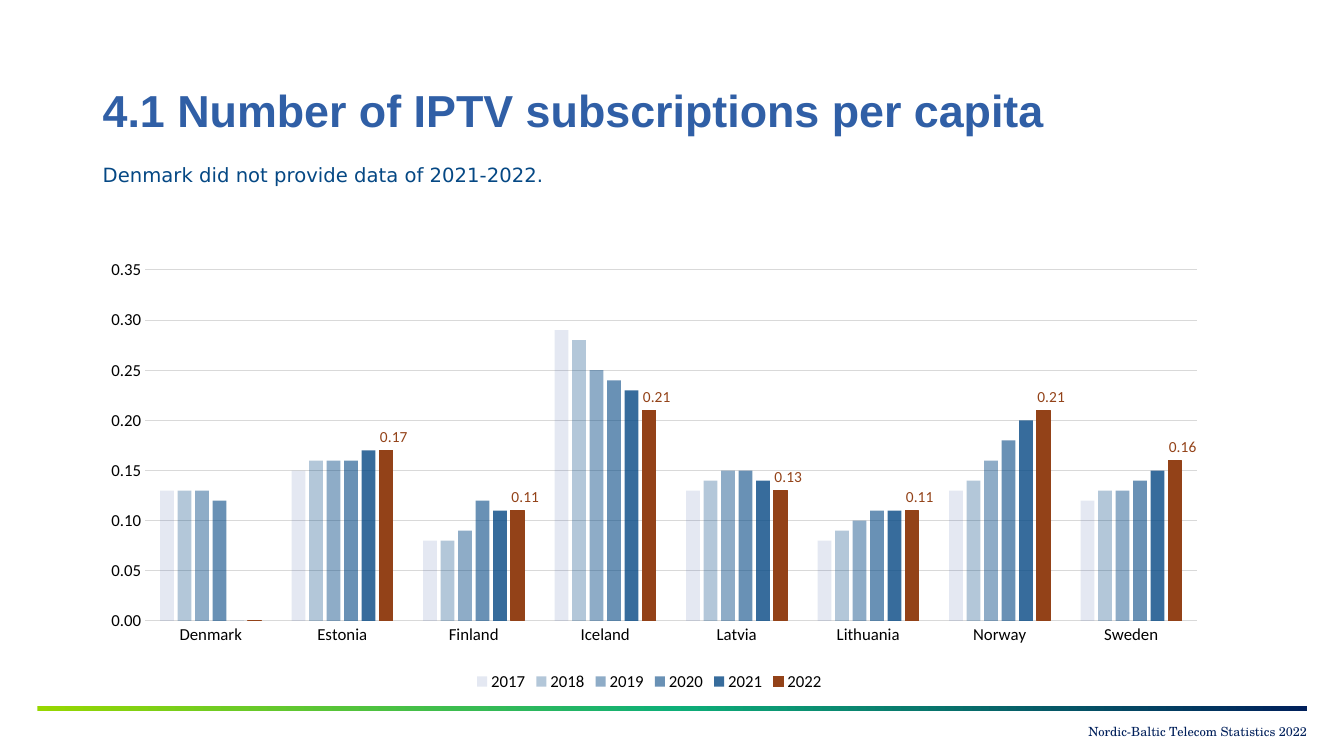
"""Build the slide on IPTV subscriptions per capita in the Nordic-Baltic countries."""
from copy import deepcopy
from dataclasses import dataclass

from pptx import Presentation
from pptx.chart.data import CategoryChartData
from pptx.dml.color import RGBColor
from pptx.enum.chart import XL_CHART_TYPE as ChartType, XL_LABEL_POSITION as LabelPosition
from pptx.enum.chart import XL_LEGEND_POSITION as LegendPosition, XL_TICK_MARK as TickMark
from pptx.enum.shapes import MSO_SHAPE as Preset
from pptx.enum.text import MSO_ANCHOR as Anchor, PP_ALIGN as Align
from pptx.oxml import parse_xml
from pptx.oxml.ns import nsdecls, qn
from pptx.util import Inches, Pt


@dataclass(frozen=True)
class Theme:
    title: str = "305FA6"
    blue: str = "054884"
    pale: str = "4A66AC"
    rust: str = "934218"
    navy: str = "00205B"
    lime: str = "97D700"
    green: str = "0EAF78"
    black: str = "000000"
    grid: str = "D9D9D9"
    title_size: int = 32
    note_size: int = 14
    axis_size: int = 12
    label_size: int = 11
    footer_size: int = 9


theme = Theme()


def style(font, name, size, color, bold=False):
    font.name, font.size, font.bold = name, Pt(size), bold
    font.color.rgb = RGBColor.from_string(color)


def add_text(box, text, name, size, color, bold=False):
    frame = slide.shapes.add_textbox(*map(Inches, box)).text_frame
    frame.word_wrap = True
    frame.text = text
    style(frame.paragraphs[0].runs[0].font, name, size, color, bold)
    return frame


deck = Presentation()
deck.slide_width, deck.slide_height = Inches(13.33), Inches(7.5)
slide = deck.slides.add_slide(deck.slide_layouts[6])

band = slide.shapes.add_shape(Preset.RECTANGLE, Inches(0.37), Inches(7), Inches(12.59), Inches(0.05))
band.shadow.inherit = False
band.line.fill.background()
band.fill.gradient()
band.fill.gradient_angle = 0
stop_list = band._element.spPr.find(".//" + qn("a:gsLst"))
stop_list.insert(1, deepcopy(stop_list[0]))
for stop, position, color in zip(band.fill.gradient_stops, (0, 0.5, 1), (theme.lime, theme.green, theme.navy)):
    stop.position = position
    stop.color.rgb = RGBColor.from_string(color)

footer = add_text((9.79, 7.13, 3.17, 0.3), "Nordic-Baltic Telecom Statistics 2022",
                  "TeX Gyre Schola", theme.footer_size, theme.navy)
footer.vertical_anchor = Anchor.MIDDLE
footer.margin_top = footer.margin_right = 0
footer.paragraphs[0].alignment = Align.RIGHT

title = add_text((0.92, 0.4, 11.5, 1.45), "4.1 Number of IPTV subscriptions per capita",
                 "Arial", theme.title_size, theme.title, True)
title.vertical_anchor = Anchor.MIDDLE
title.paragraphs[0].line_spacing = 0.9

subscriptions = {
    "2017": (0.13, 0.15, 0.08, 0.29, 0.13, 0.08, 0.13, 0.12),
    "2018": (0.13, 0.16, 0.08, 0.28, 0.14, 0.09, 0.14, 0.13),
    "2019": (0.13, 0.16, 0.09, 0.25, 0.15, 0.1, 0.16, 0.13),
    "2020": (0.12, 0.16, 0.12, 0.24, 0.15, 0.11, 0.18, 0.14),
    "2021": (0, 0.17, 0.11, 0.23, 0.14, 0.11, 0.2, 0.15),
    "2022": (0, 0.17, 0.11, 0.21, 0.13, 0.11, 0.21, 0.16),
}
data = CategoryChartData(number_format="0.00")
data.categories = ["Denmark", "Estonia", "Finland", "Iceland", "Latvia", "Lithuania", "Norway", "Sweden"]
for year, values in subscriptions.items():
    data.add_series(year, values)
chart = slide.shapes.add_chart(ChartType.COLUMN_CLUSTERED, Inches(0.92), Inches(2.48),
                               Inches(11.04), Inches(4.42), data).chart
chart.has_title = False
style(chart.font, "Calibri", theme.axis_size, theme.black)
chart.has_legend = True
chart.legend.position = LegendPosition.BOTTOM
chart.legend.include_in_layout = False
style(chart.legend.font, "Calibri", theme.axis_size, theme.black)

columns = chart.plots[0]
columns.gap_width, columns.overlap, columns.vary_by_categories = 219, -27, False

countries, rate = chart.category_axis, chart.value_axis
for axis in (countries, rate):
    axis.major_tick_mark = axis.minor_tick_mark = TickMark.NONE
    style(axis.tick_labels.font, "Calibri", theme.axis_size, theme.black)
rate.minimum_scale, rate.maximum_scale, rate.major_unit = 0, 0.35, 0.05
rate.tick_labels.number_format = "0.00"
rate.tick_labels.number_format_is_linked = False
rate.format.line.fill.background()
for line in (countries.format.line, rate.major_gridlines.format.line):
    line.color.rgb = RGBColor.from_string(theme.grid)
    line.width = Pt(0.75)

shades = ((theme.pale, 15), (theme.blue, 30), (theme.blue, 45), (theme.blue, 60), (theme.blue, 80), (theme.rust, 100))
for series, (color, opacity) in zip(columns.series, shades):
    series.invert_if_negative = False
    series.format.fill.solid()
    series.format.fill.fore_color.rgb = RGBColor.from_string(color)
    if opacity < 100:
        tint = series._element.find(".//" + qn("a:srgbClr"))
        tint.append(parse_xml(f'<a:alpha {nsdecls("a")} val="{opacity * 1000}"/>'))

latest = columns.series[-1]
latest.format.line.color.rgb = RGBColor.from_string(theme.rust)
latest.format.line.width = Pt(0.75)
labels = latest.data_labels
labels.show_value = True
labels.number_format, labels.number_format_is_linked = "0.00", False
labels.position = LabelPosition.OUTSIDE_END
style(labels.font, "Calibri", theme.label_size, theme.rust)

label_parts = [part for part in labels._element if part.tag != qn("c:showLeaderLines")]
for country, value in enumerate(subscriptions["2022"]):
    label = parse_xml(f'<c:dLbl {nsdecls("c")}><c:idx val="{country}"/></c:dLbl>')
    if value:
        label.append(parse_xml(f'<c:layout {nsdecls("c")}><c:manualLayout><c:x val="0.007"/>'
                               '<c:y val="0"/></c:manualLayout></c:layout>'))
        label.extend(deepcopy(label_parts))
    else:
        label.append(parse_xml(f'<c:delete {nsdecls("c")} val="1"/>'))
    labels._element.insert(country, label)

plot_area = chart._chartSpace.find(".//" + qn("c:plotArea"))
for automatic in plot_area.findall(qn("c:layout")):
    plot_area.remove(automatic)
edges = "".join(f'<c:{edge} val="{share}"/>' for edge, share in
                (("xMode", "edge"), ("yMode", "edge"), ("x", 0.047), ("y", 0.045), ("w", 0.945), ("h", 0.788)))
plot_area.insert(0, parse_xml(f'<c:layout {nsdecls("c")}><c:manualLayout><c:layoutTarget val="inner"/>'
                              f'{edges}</c:manualLayout></c:layout>'))

add_text((0.92, 1.57, 11.04, 1), "Denmark did not provide data of 2021-2022.",
         "DejaVu Sans", theme.note_size, theme.blue)

deck.save("out.pptx")
